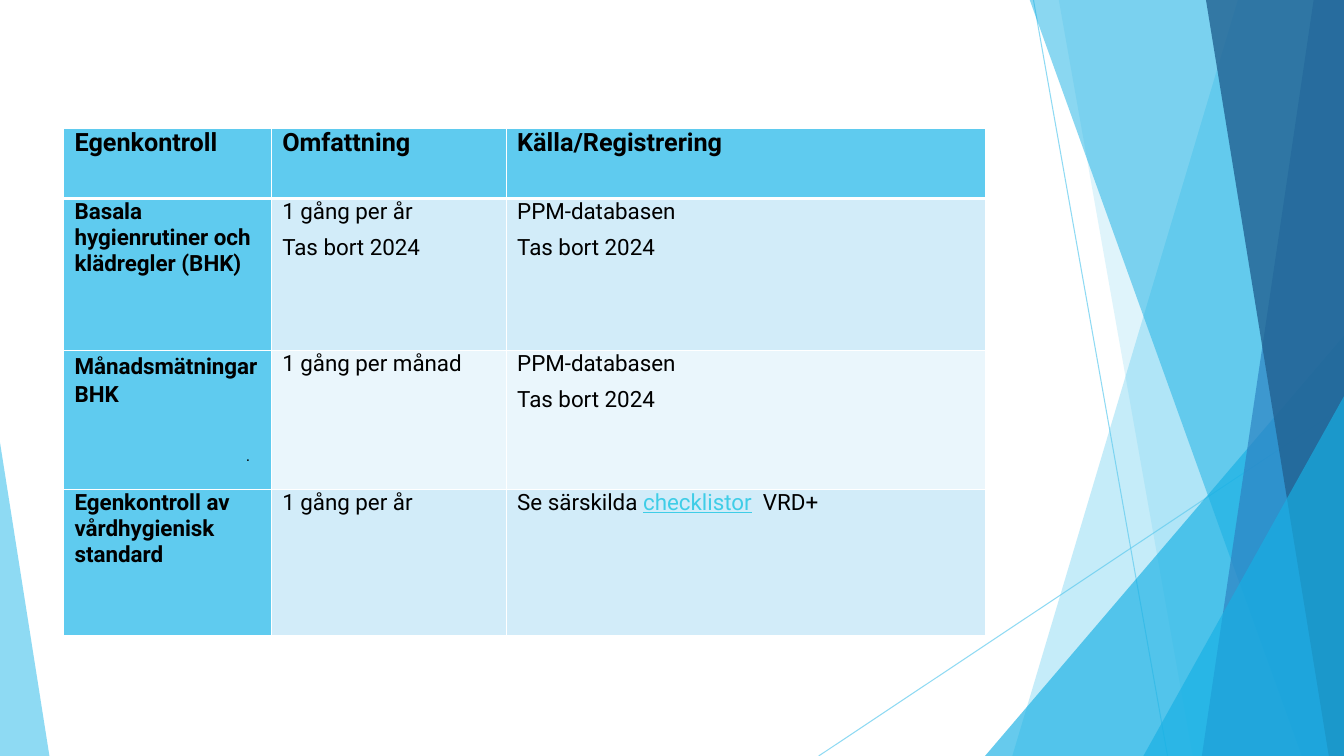
import pptx
import pptx.util
import pptx.dml.color
import pptx.enum.shapes
import pptx.enum.text
import pptx.oxml
import pptx.oxml.ns

Inches = pptx.util.Inches
Pt = pptx.util.Pt
NS = pptx.oxml.ns.nsdecls("a")
COLORS = {
    "sky": "5FCBEF", "cyan": "17B0E4", "blue": "2E83C3", "navy": "226292",
    "pale": "D2ECF9", "ice": "EAF6FC", "link": "3FCDE7",
    "black": "000000", "white": "FFFFFF",
}
RIGHT, TOP, BASE = 13.33, -0.01, 7.5


class Deck:
    def __init__(self, font):
        self.font = font
        self.prs = pptx.Presentation()
        self.prs.slide_width = Inches(RIGHT)
        self.prs.slide_height = Inches(BASE)
        self.slide = self.prs.slides.add_slide(self.prs.slide_layouts[6])

    def paint(self, fill, name, alpha=100):
        fill.solid()
        fill.fore_color.rgb = pptx.dml.color.RGBColor.from_string(COLORS[name])
        if alpha < 100:
            self.fade(fill._xPr, alpha)

    def fade(self, node, alpha):
        color = node.find(".//" + pptx.oxml.ns.qn("a:srgbClr"))
        color.append(pptx.oxml.parse_xml(f'<a:alpha {NS} val="{alpha * 1000}"/>'))

    def finish(self, shape, name, alpha):
        shape.shadow.inherit = False
        shape.line.fill.background()
        self.paint(shape.fill, name, alpha)

    def line(self, x1, y1, x2, y2, name, alpha):
        kind = pptx.enum.shapes.MSO_CONNECTOR.STRAIGHT
        wire = self.slide.shapes.add_connector(
            kind, Inches(x1), Inches(y1), Inches(x2), Inches(y2))
        wire.line.width = Pt(0.75)
        self.paint(wire.line.fill, name)
        self.fade(wire.line._ln, alpha)
        wire._element.spPr.append(pptx.oxml.parse_xml(f"<a:effectLst {NS}/>"))

    def band(self, top, base, name, alpha):
        """Fill from a slanted left edge to the right side of the slide."""
        points = [(RIGHT, TOP), (RIGHT, BASE), (base, BASE)]
        form = self.slide.shapes.build_freeform(Inches(top), Inches(TOP))
        form.add_line_segments([(Inches(x), Inches(y)) for x, y in points])
        self.finish(form.convert_to_shape(), name, alpha)

    def wedge(self, x, y, wide, tip, name, alpha):
        kind = pptx.enum.shapes.MSO_SHAPE.ISOSCELES_TRIANGLE
        shape = self.slide.shapes.add_shape(
            kind, Inches(x), Inches(y), Inches(wide), Inches(BASE - y))
        shape.adjustments[0] = tip
        self.finish(shape, name, alpha)

    def style(self, run, size, bold=False, name="black", font=None):
        run.font.name = font or self.font
        run.font.size = Pt(size)
        run.font.bold = bold
        self.paint(run.font.fill, name)

    def text(self, x, y, wide, high, words, size, font):
        box = self.slide.shapes.add_textbox(
            Inches(x), Inches(y), Inches(wide), Inches(high))
        frame = box.text_frame
        frame.word_wrap = True
        frame.vertical_anchor = pptx.enum.text.MSO_ANCHOR.MIDDLE
        frame.text = words
        self.style(frame.paragraphs[0].runs[0], size, font=font)

    def border(self, cell, widths):
        props = cell._tc.get_or_add_tcPr()
        for spot, (side, width) in enumerate(zip("LRTB", widths)):
            props.insert(spot, pptx.oxml.parse_xml(
                f'<a:ln{side} {NS} w="{Pt(width)}"><a:solidFill>'
                f'<a:srgbClr val="{COLORS["white"]}"/></a:solidFill></a:ln{side}>'))

    def cell(self, cell, lines, size, bold, fill):
        cell.margin_left = cell.margin_right = Inches(0.07)
        cell.margin_top = cell.margin_bottom = 0
        self.paint(cell.fill, fill)
        frame = cell.text_frame
        for spot, line in enumerate(lines):
            para = frame.add_paragraph() if spot else frame.paragraphs[0]
            para.space_before, para.space_after = Pt(2), Pt(5)
            para._p.get_or_add_pPr().set("marL", str(Inches(0.04)))
            for part in line if isinstance(line, tuple) else (line,):
                run = para.add_run()
                run.text = part
                self.style(run, size, bold)

    def table(self, x, y, cols, rows, data):
        table = self.slide.shapes.add_table(
            len(rows), len(cols), Inches(x), Inches(y),
            Inches(sum(cols)), Inches(sum(rows))).table
        for col, wide in zip(table.columns, cols):
            col.width = Inches(wide)
        for row, high in zip(table.rows, rows):
            row.height = Inches(high)
        for r, record in enumerate(data):
            for c, lines in enumerate(record):
                head = r == 0 or c == 0
                fill = "sky" if head else ("pale" if r % 2 else "ice")
                cell = table.cell(r, c)
                self.cell(cell, lines, 16 if r else 18, head, fill)
                self.border(cell, (1, 1, 3 if r == 1 else 1, 1 if r else 3))
        return table


def main():
    deck = Deck("Roboto")

    # Decoration, back to front
    deck.line(10.25, 0, 11.58, BASE, "sky", 70)
    deck.line(RIGHT, 4.03, 8.12, BASE, "sky", 70)
    deck.band(12.28, 10.04, "sky", 36)
    deck.band(10.5, 11.83, "sky", 20)
    deck.wedge(9.77, 3.33, 3.56, 1, "cyan", 66)
    deck.band(10.21, 12.91, "cyan", 50)
    deck.band(13.03, 11.92, "blue", 70)
    deck.band(11.96, 13.18, "navy", 80)
    deck.wedge(11.34, 3.93, 1.99, 1, "cyan", 66)
    deck.wedge(0, 4.39, 0.49, 0, "sky", 70)

    # Table of self-checks
    source = ["PPM-databasen", "Tas bort 2024"]
    checks = [
        (["Egenkontroll"], ["Omfattning"], ["Källa/Registrering"]),
        (["Basala hygienrutiner och klädregler (BHK)"],
         ["1 gång per år", "Tas bort 2024"], source),
        (["Månadsmätningar BHK"], ["1 gång per månad"], source),
        (["Egenkontroll av vårdhygienisk standard"], ["1 gång per år"],
         [("Se särskilda ", "checklistor", "  VRD+")]),
    ]
    table = deck.table(0.63, 1.27, [2.06, 2.33, 4.76],
                       [0.7, 1.51, 1.38, 1.45], checks)

    # Looser month label and coloured list name
    month = table.cell(2, 0).text_frame.paragraphs[0]
    month.line_spacing = 1.1
    month.space_before = Pt(1)
    lists = table.cell(3, 2).text_frame.paragraphs[0].runs[1]
    lists.font.underline = True
    deck.paint(lists.font.fill, "link")

    # Lone full stop
    deck.text(2.34, 4.37, 8.82, 0.29, ".", 11, "Arial")

    deck.prs.save("out.pptx")


if __name__ == "__main__":
    main()
